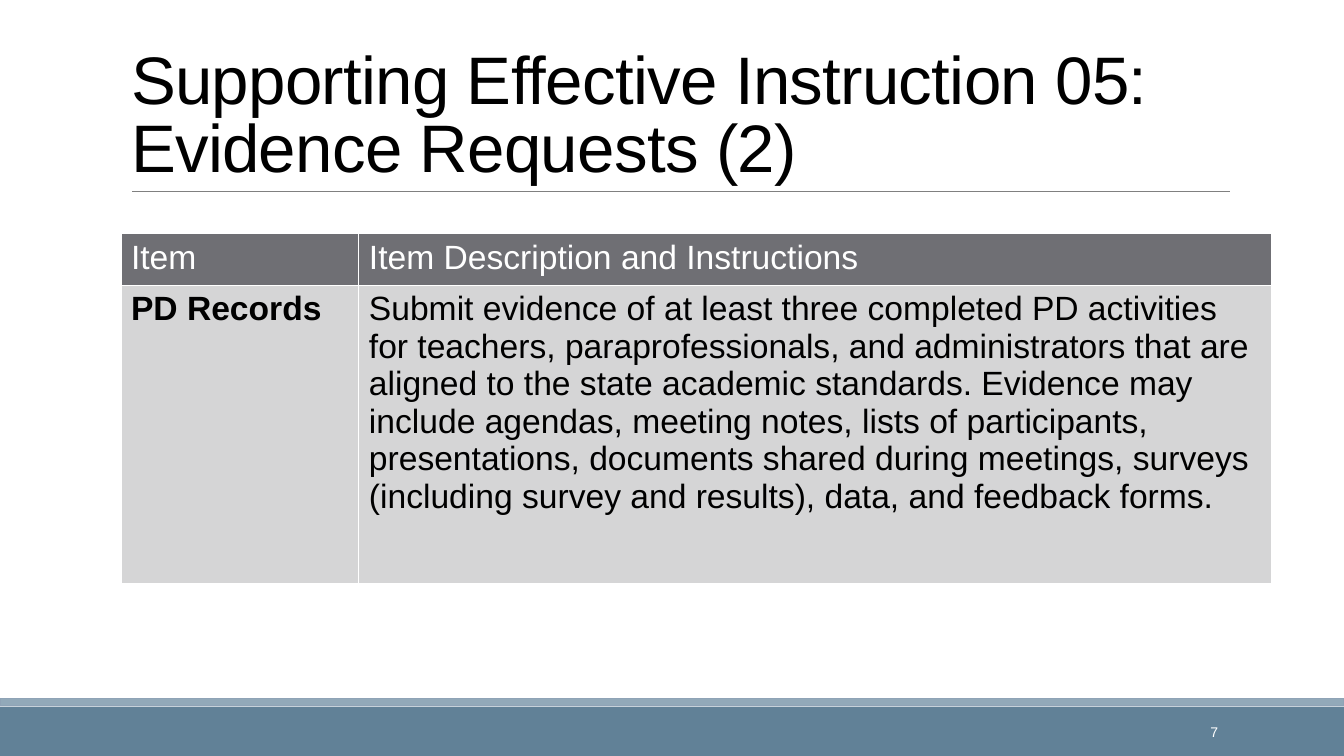
import pptx
import pptx.util
import pptx.dml.color
import pptx.enum.shapes
import pptx.enum.text
import pptx.oxml
import pptx.oxml.ns

Inches, Pt = pptx.util.Inches, pptx.util.Pt
RGB = pptx.dml.color.RGBColor.from_string
ANCHOR = pptx.enum.text.MSO_ANCHOR
ALIGN = pptx.enum.text.PP_ALIGN
COLORS = {"black": "000000", "white": "FFFFFF", "footer": "618197",
          "strip": "92A9B9", "strip_line": "8FA3B6", "rule": "808080",
          "header": "6F6F74", "body": "D5D5D6"}
W, H = 13.33, 7.5
LEFT = 0.09 * W


def write(tf, text, color, **font):
    p = tf.paragraphs[0]
    r = p.add_run()
    r.text = text
    r.font.color.rgb = RGB(COLORS[color])
    for name, value in {"name": "Arial", **font}.items():
        setattr(r.font, name, value)
    return p, r


prs = pptx.Presentation()
prs.slide_width, prs.slide_height = Inches(W), Inches(H)
s = prs.slides.add_slide(prs.slide_layouts[5])

# Footer bands
for top, height, fill, line in [(7.01, H - 7.01, "footer", None),
                                (6.93, 0.07, "strip", "strip_line")]:
    band = s.shapes.add_shape(pptx.enum.shapes.MSO_SHAPE.RECTANGLE,
                              0, Inches(top), Inches(W), Inches(height))
    band.shadow.inherit = False
    band.fill.solid()
    band.fill.fore_color.rgb = RGB(COLORS[fill])
    if line:
        band.line.color.rgb = RGB(COLORS[line])
        band.line.width = Pt(1.25)
    else:
        band.line.fill.background()

# Rule under the title
rule = s.shapes.add_connector(pptx.enum.shapes.MSO_CONNECTOR.STRAIGHT,
                              Inches(1.31), Inches(1.9), Inches(12.2), Inches(1.9))
rule.line.color.rgb = RGB(COLORS["rule"])
rule.line.width = Pt(0.5)
rule._element.spPr.append(pptx.oxml.parse_xml(
    "<a:effectLst %s/>" % pptx.oxml.ns.nsdecls("a")))

# Title
title = s.shapes.title
title.left, title.top = Inches(LEFT), Inches(0.31)
title.width, title.height = Inches(11), Inches(1.59)
tf = title.text_frame
tf.word_wrap = True
tf.auto_size = pptx.enum.text.MSO_AUTO_SIZE.NONE
tf.vertical_anchor = ANCHOR.BOTTOM
p, r = write(tf, "Supporting Effective Instruction 05: Evidence Requests (2)",
             "black", size=Pt(48))
p.alignment = ALIGN.LEFT
p.line_spacing = 0.85
r._r.get_or_add_rPr().set("spc", "-50")

# Evidence table
rows = [
    ("Item", "Item Description and Instructions"),
    ("PD Records",
     "Submit evidence of at least three completed PD activities for teachers, "
     "paraprofessionals, and administrators that are aligned to the state academic "
     "standards. Evidence may include agendas, meeting notes, lists of participants, "
     "presentations, documents shared during meetings, surveys (including survey and "
     "results), data, and feedback forms."),
]
col_widths, row_heights = (2.36, 9.05), (0.51, 2.96)
table = s.shapes.add_table(2, 2, Inches(LEFT), Inches(2.32),
                           Inches(sum(col_widths)), Inches(sum(row_heights))).table
for col, width in zip(table.columns, col_widths):
    col.width = Inches(width)
for row, height in zip(table.rows, row_heights):
    row.height = Inches(height)

for i, texts in enumerate(rows):
    for j, text in enumerate(texts):
        cell = table.cell(i, j)
        cell.fill.solid()
        cell.fill.fore_color.rgb = RGB(COLORS["body" if i else "header"])
        write(cell.text_frame, text, "black" if i else "white",
              size=Pt(24), bold=(i == 1 and j == 0))
        tcPr = cell._tc.get_or_add_tcPr()
        for n, side in enumerate("LRTB"):
            tcPr.insert(n, pptx.oxml.parse_xml(
                '<a:ln%s %s w="%d"><a:solidFill><a:srgbClr val="%s"/></a:solidFill></a:ln%s>'
                % (side, pptx.oxml.ns.nsdecls("a"), Pt(1), COLORS["white"], side)))

# Slide number
number = s.shapes.add_textbox(Inches(10.74), Inches(7.06), Inches(1.44), Inches(0.4))
tf = number.text_frame
tf.word_wrap = True
tf.vertical_anchor = ANCHOR.MIDDLE
p, r = write(tf, "7", "white", size=Pt(10))
p.alignment = ALIGN.RIGHT

prs.save("out.pptx")
